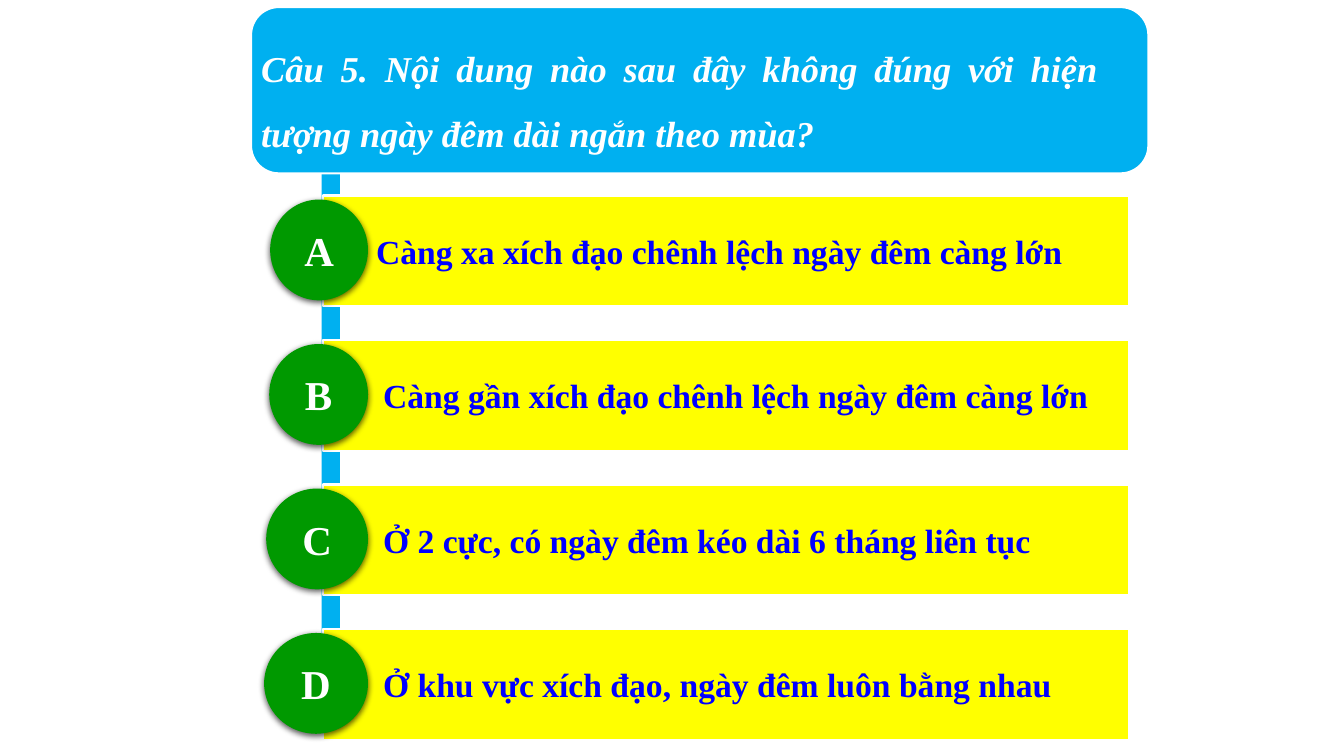
import pptx
import pptx.util
import pptx.dml.color
import pptx.enum.shapes
import pptx.enum.text
import pptx.oxml
import pptx.oxml.ns

COLOURS = {"banner": "00B0F0", "bar": "FFFF00", "badge": "009900",
           "answer": "0000FF", "white": "FFFFFF", "shadow": "000000"}
FONT = "Times New Roman"
SHAPE = pptx.enum.shapes.MSO_SHAPE
ALIGN = pptx.enum.text.PP_ALIGN
ANCHOR = pptx.enum.text.MSO_ANCHOR
inches = pptx.util.Inches

# Answer rows: four equal steps down the slide
FIRST_ROW, LAST_ROW = 1.94, 6.24
BAR_LEFT, BAR_WIDTH, BAR_HEIGHT = 3.2, 8, 1.1
BADGE_RIGHT, BADGE_HEIGHT = 3.65, 1

QUESTION = ("Câu 5. Nội dung nào sau đây không đúng với hiện tượng "
            "ngày đêm dài ngắn theo mùa?")
# letter, answer, left of the badge, left inset of the answer
ANSWERS = [
    ("A", "Càng xa xích đạo chênh lệch ngày đêm càng lớn", 2.68, 0.53),
    ("B", "Càng gần xích đạo chênh lệch ngày đêm càng lớn", 2.67, 0.6),
    ("C", "Ở 2 cực, có ngày đêm kéo dài 6 tháng liên tục", 2.64, 0.6),
    ("D", "Ở khu vực xích đạo, ngày đêm luôn bằng nhau", 2.62, 0.6),
]


def colour(name):
    return pptx.dml.color.RGBColor.from_string(COLOURS[name])


def add_block(slide, preset, box, fill, outlined=False):
    block = slide.shapes.add_shape(preset, *map(inches, box))
    block.shadow.inherit = False
    block.fill.solid()
    block.fill.fore_color.rgb = colour(fill)
    if outlined:
        block.line.color.rgb = colour("white")
        block.line.width = pptx.util.Pt(1.5)
    else:
        block.line.fill.background()
    return block


def write(shape, text, size, ink, align, anchor=ANCHOR.MIDDLE, italic=False):
    frame = shape.text_frame
    frame.word_wrap = True
    frame.vertical_anchor = anchor
    paragraph = frame.paragraphs[0]
    paragraph.alignment = align
    run = paragraph.add_run()
    run.text = text
    run.font.name = FONT
    run.font.size = pptx.util.Pt(size)
    run.font.bold = True
    run.font.italic = italic
    run.font.color.rgb = colour(ink)
    return paragraph


def add_soft_shadow(shape):
    """Fill the shape's empty effect list with a shadow falling straight down."""
    effects = shape._element.spPr.find(pptx.oxml.ns.qn("a:effectLst"))
    effects.append(pptx.oxml.parse_xml(
        f'<a:outerShdw {pptx.oxml.ns.nsdecls("a")} blurRad="{pptx.util.Pt(4.5)}" '
        f'dist="{pptx.util.Pt(1.5)}" dir="5400000" algn="ctr" rotWithShape="0">'
        f'<a:srgbClr val="{COLOURS["shadow"]}"><a:alpha val="63000"/></a:srgbClr>'
        '</a:outerShdw>'))


def add_question(slide):
    add_block(slide, SHAPE.ROUNDED_RECTANGLE, (2.49, 0.07, 8.9, 1.65),
              "banner", outlined=True)
    title = slide.shapes.title
    title.left, title.top, title.width, title.height = map(
        inches, (2.49, 0.19, 8.51, 1.41))
    title.text_frame.auto_size = pptx.enum.text.MSO_AUTO_SIZE.NONE
    paragraph = write(title, QUESTION, 26, "white", ALIGN.JUSTIFY,
                      ANCHOR.TOP, italic=True)
    paragraph.line_spacing = 1.5
    slide.shapes._spTree.append(title._element)  # bring in front of the banner


def add_answer(slide, top, letter, answer, badge_left, inset):
    bar = add_block(slide, SHAPE.RECTANGLE,
                    (BAR_LEFT, top, BAR_WIDTH, BAR_HEIGHT), "bar", outlined=True)
    bar.text_frame.margin_left = inches(inset)
    write(bar, answer, 24, "answer", ALIGN.JUSTIFY)
    badge = add_block(slide, SHAPE.OVAL,
                      (badge_left, top + 0.04, BADGE_RIGHT - badge_left,
                       BADGE_HEIGHT), "badge")
    add_soft_shadow(badge)
    write(badge, letter, 29.3, "white", ALIGN.CENTER)


def main():
    deck = pptx.Presentation()
    deck.slide_width, deck.slide_height = inches(13.33), inches(7.5)
    slide = deck.slides.add_slide(deck.slide_layouts.get_by_name("Title Only"))
    add_block(slide, SHAPE.RECTANGLE, (3.19, 1.07, 0.18, 6.02), "banner")
    add_question(slide)
    pitch = (LAST_ROW - FIRST_ROW) / (len(ANSWERS) - 1)
    for row, option in enumerate(ANSWERS):
        add_answer(slide, FIRST_ROW + row * pitch, *option)
    deck.save("out.pptx")


if __name__ == "__main__":
    main()
